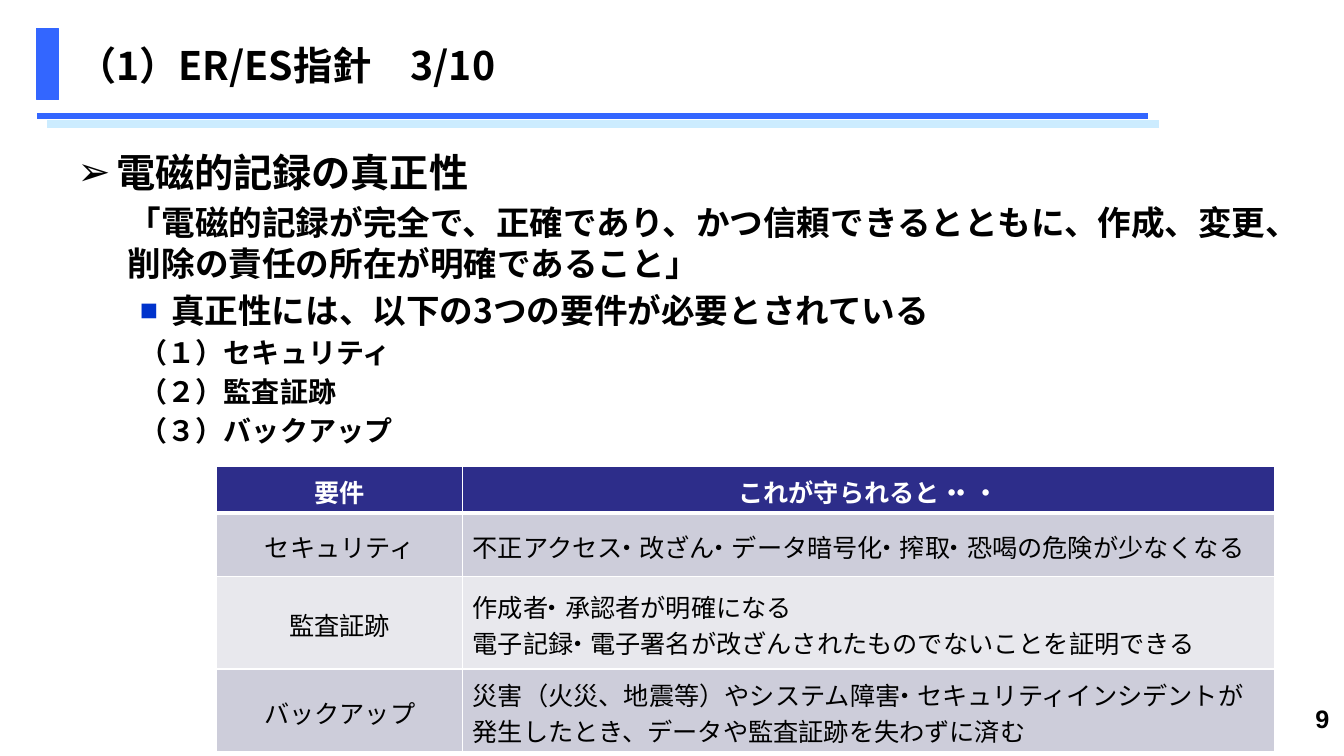
from itertools import groupby
from lxml.etree import SubElement
from pptx import Presentation
from pptx.dml.color import RGBColor
from pptx.enum.shapes import MSO_CONNECTOR, MSO_SHAPE
from pptx.enum.text import MSO_ANCHOR, MSO_AUTO_SIZE, PP_ALIGN
from pptx.oxml.ns import qn
from pptx.util import Cm, Pt

COLORS = {"black": "000000", "white": "FFFFFF", "blue": "3366FF", "pale": "CCECFF",
          "bullet": "0033CC", "header": "2D2D8A", "odd": "CDCDDA", "even": "E8E8ED"}
NOTO, ARIAL = "Noto Sans CJK JP", "Arial"
DOT = "・"

TITLE = "（1）ER/ES指針　3/10"
PAGE = "9"
# text, level, size, left margin (cm), indent (cm), bullet, bullet colour, bullet size %
BODY = [
    ("電磁的記録の真正性", 0, 28, 0.97, -0.97, "➢", "black", 100),
    ("「電磁的記録が完全で、正確であり、かつ信頼できるとともに、作成、変更、"
     "削除の責任の所在が明確であること」", 1, 24, 1.27, 0, None, None, None),
    ("真正性には、以下の3つの要件が必要とされている", 1, 24, 2.36, -0.79, "■", "bullet", 90),
    ("（１）セキュリティ", 1, 20, 1.57, 0, None, None, None),
    ("（２）監査証跡", 1, 20, 1.57, 0, None, None, None),
    ("（３）バックアップ", 1, 20, 1.57, 0, None, None, None),
]
TABLE = [
    ("要件", ["これが守られると・・・"]),
    ("セキュリティ", ["不正アクセス・改ざん・データ暗号化・搾取・恐喝の危険が少なくなる"]),
    ("監査証跡", ["作成者・承認者が明確になる",
              "電子記録・電子署名が改ざんされたものでないことを証明できる"]),
    ("バックアップ", ["災害（火災、地震等）やシステム障害・セキュリティインシデントが"
                "発生したとき、データや監査証跡を失わずに済む"]),
]
COL_WIDTHS = [6.2, 20.45]
ROW_HEIGHTS = [1.17, 1.6, 2.34, 2.08]
# y, left, right, colour, width in points
RULES = [(2.92, 0.94, 28.93, "blue", 4.5), (3.12, 1.19, 29.21, "pale", 6)]


def rgb(name):
    return RGBColor.from_string(COLORS[name])


def split_by_tightness(text):
    """Yield (spacing in points, piece), closing up both sides of each middle dot."""
    pairs = zip(text, text[1:] + " ")
    tight = [(-6 * ((c == DOT) + (after == DOT)), c) for c, after in pairs]
    for spacing, group in groupby(tight, key=lambda item: item[0]):
        yield spacing, "".join(c for _, c in group)


def write(p, text, size=18, font=ARIAL, color="black", bold=False, align=PP_ALIGN.LEFT):
    p.alignment = align
    for spacing, piece in split_by_tightness(text):
        r = p.add_run()
        r.text = piece
        r.font.size, r.font.bold, r.font.name = Pt(size), bold, font
        r.font.color.rgb = rgb(color)
        SubElement(r.font._element, qn("a:ea"), typeface=font)
        if spacing:
            r.font._element.set("spc", str(spacing * 100))


def place(sp, left, top, width, height):
    sp.left, sp.top, sp.width, sp.height = Cm(left), Cm(top), Cm(width), Cm(height)


def set_bullet(p, char, color, percent):
    pPr = p._p.get_or_add_pPr()
    if char is None:
        SubElement(pPr, qn("a:buNone"))
        return
    SubElement(SubElement(pPr, qn("a:buClr")), qn("a:srgbClr"), val=COLORS[color])
    SubElement(pPr, qn("a:buSzPct"), val=str(percent * 1000))
    SubElement(pPr, qn("a:buFont"), typeface=ARIAL)
    SubElement(pPr, qn("a:buChar"), char=char)


def set_borders(cell, bottom):
    tcPr = cell._tc.get_or_add_tcPr()
    for side, width in (("L", 1), ("R", 1), ("T", 1), ("B", bottom)):
        ln = SubElement(tcPr, qn("a:ln" + side), w=str(Pt(width)))
        SubElement(SubElement(ln, qn("a:solidFill")), qn("a:srgbClr"), val=COLORS["white"])


def add_decoration(s):
    for y, left, right, color, width in RULES:
        rule = s.shapes.add_connector(MSO_CONNECTOR.STRAIGHT, Cm(right), Cm(y), Cm(left), Cm(y))
        rule.line.color.rgb, rule.line.width = rgb(color), Pt(width)
        SubElement(rule._element.spPr, qn("a:effectLst"))
    bar = s.shapes.add_shape(MSO_SHAPE.RECTANGLE, Cm(0.93), Cm(0.72), Cm(0.55), Cm(1.8))
    bar.shadow.inherit = False
    bar.fill.solid()
    bar.fill.fore_color.rgb = bar.line.color.rgb = rgb("blue")
    bar.line.width = Pt(0.75)


def fill_text(s):
    title, body = s.shapes.title, s.placeholders[1]
    place(title, 1.7, 0.53, 30.48, 2.21)
    title.text_frame.vertical_anchor = MSO_ANCHOR.MIDDLE
    write(title.text_frame.paragraphs[0], TITLE, size=28, font=NOTO, bold=True)

    place(body, 1.7, 3.61, 31.45, 8.64)
    tf = body.text_frame
    tf.auto_size = MSO_AUTO_SIZE.NONE
    for i, (text, level, size, margin, indent, char, color, percent) in enumerate(BODY):
        p = tf.add_paragraph() if i else tf.paragraphs[0]
        set_bullet(p, char, color, percent)
        pPr = p._p.get_or_add_pPr()
        pPr.set("marL", str(Cm(margin)))
        pPr.set("indent", str(Cm(indent)))
        p.level = level
        p.space_before = Pt(size * 0.2 if i else 0)
        write(p, text, size=size, font=NOTO, bold=True)


def add_requirements(s):
    table = s.shapes.add_table(len(TABLE), 2, Cm(5.46), Cm(11.75),
                               Cm(sum(COL_WIDTHS)), Cm(sum(ROW_HEIGHTS))).table
    for column, width in zip(table.columns, COL_WIDTHS):
        column.width = Cm(width)
    for i, (name, effect) in enumerate(TABLE):
        table.rows[i].height = Cm(ROW_HEIGHTS[i])
        header = i == 0
        fill = "header" if header else "odd" if i % 2 else "even"
        for j, lines in enumerate(([name], effect)):
            cell = table.cell(i, j)
            cell.vertical_anchor = MSO_ANCHOR.MIDDLE
            set_borders(cell, 3 if header else 1)
            cell.fill.solid()
            cell.fill.fore_color.rgb = rgb(fill)
            for k, line in enumerate(lines):
                tf = cell.text_frame
                p = tf.add_paragraph() if k else tf.paragraphs[0]
                p.line_spacing = 1.28
                write(p, line, color="white" if header else "black", bold=header,
                      align=PP_ALIGN.CENTER if header or j == 0 else PP_ALIGN.LEFT)


def add_page_number(s):
    tf = s.shapes.add_textbox(Cm(30.5), Cm(17.6), Cm(3.25), Cm(1.32)).text_frame
    tf.word_wrap = True
    write(tf.paragraphs[0], PAGE, bold=True, align=PP_ALIGN.RIGHT)


def main():
    prs = Presentation()
    prs.slide_width, prs.slide_height = Cm(33.87), Cm(19.05)
    s = prs.slides.add_slide(prs.slide_layouts[1])
    add_decoration(s)
    fill_text(s)
    add_requirements(s)
    add_page_number(s)
    prs.save("out.pptx")


if __name__ == "__main__":
    main()
